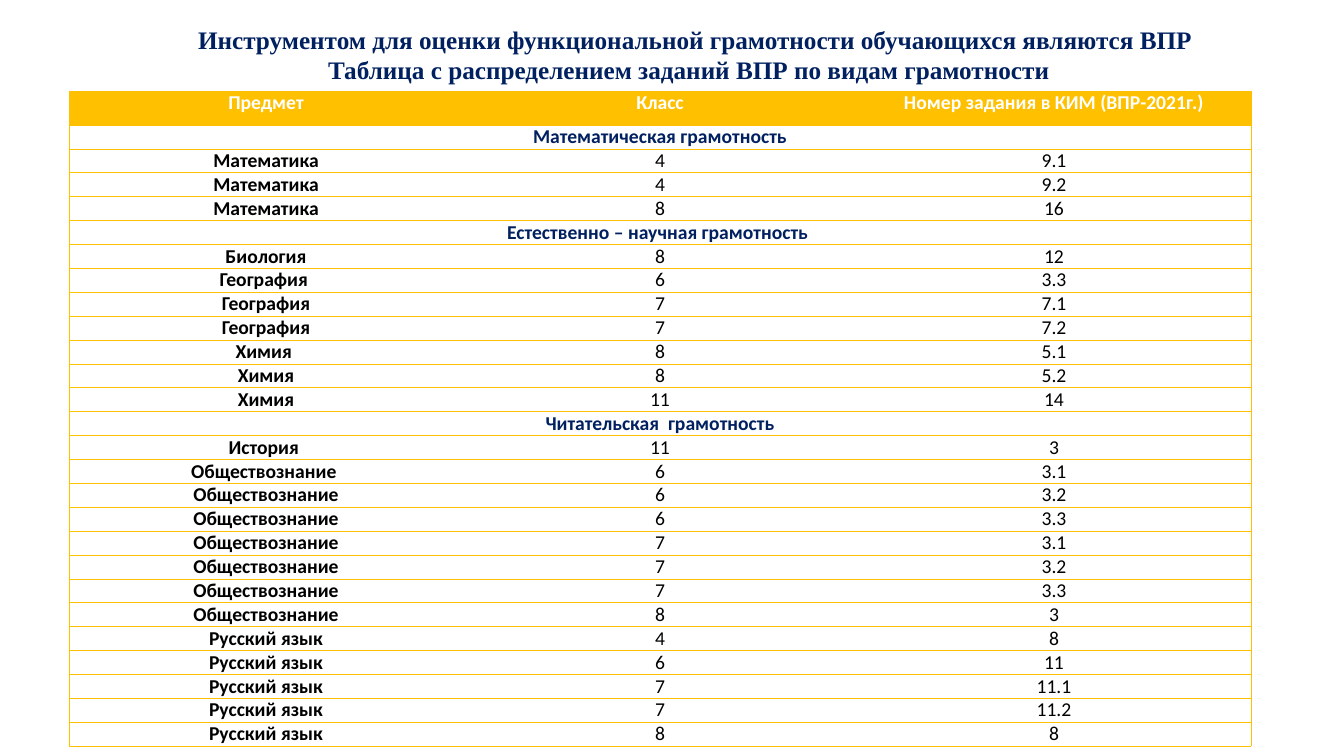
from lxml.etree import SubElement
from pptx import Presentation
from pptx.dml.color import RGBColor
from pptx.enum.text import MSO_AUTO_SIZE, PP_ALIGN
from pptx.oxml.ns import qn
from pptx.util import Emu, Pt

TITLE = [
    " Инструментом для оценки функциональной грамотности обучающихся являются ВПР",
    "Таблица с распределением заданий ВПР по видам грамотности ",
]
HEADINGS = ("Предмет", "Класс", "Номер задания в КИМ (ВПР-2021г.)")
LITERACIES = {
    "Математическая грамотность": [
        ("Математика", "4", "9.1"),
        ("Математика", "4", "9.2"),
        ("Математика", "8", "16"),
    ],
    "Естественно – научная грамотность ": [
        ("Биология", "8", "12"),
        ("География ", "6", "3.3"),
        ("География", "7", "7.1"),
        ("География", "7", "7.2"),
        ("Химия ", "8", "5.1"),
        ("Химия", "8", "5.2"),
        ("Химия", "11", "14"),
    ],
    "Читательская  грамотность": [
        ("История ", "11", "3"),
        ("Обществознание ", "6", "3.1"),
        ("Обществознание", "6", "3.2"),
        ("Обществознание", "6", "3.3"),
        ("Обществознание", "7", "3.1"),
        ("Обществознание", "7", "3.2"),
        ("Обществознание", "7", "3.3"),
        ("Обществознание", "8", "3"),
        ("Русский язык", "4", "8"),
        ("Русский язык", "6", "11"),
        ("Русский язык", "7", "11.1"),
        ("Русский язык", "7", "11.2"),
        ("Русский язык", "8", "8"),
    ],
}
GOLD, NAVY, WHITE, BLACK = "FFC000", "002060", "FFFFFF", "000000"

SLIDE_W, SLIDE_H = 1344, 756
LEFT, TITLE_TOP, TITLE_W, TITLE_H = 69, 19, 1246, 72
TABLE_TOP, COLUMN_W, HEADING_H, ROW_H = 91, 394, 34, 17
CELL_INSET = 4


def px(length):
    return Emu(round(length * 914400 / 100.8))


def color(code):
    return RGBColor.from_string(code)


def write(frame, lines, font="Calibri", size=14, fill=BLACK, bold=False):
    """Put centred lines into a text frame, one paragraph each."""
    for index, line in enumerate(lines):
        paragraph = frame.add_paragraph() if index else frame.paragraphs[0]
        paragraph.alignment = PP_ALIGN.CENTER
        run = paragraph.add_run()
        run.text = line
        run.font.name = font
        run.font.size = Pt(size)
        run.font.bold = bold
        run.font.color.rgb = color(fill)


def set_borders(cell, sides):
    """Draw gold lines on the named sides (letters of LRTB), none elsewhere."""
    properties = cell._tc.get_or_add_tcPr()
    for side in "LRTB":
        line = SubElement(properties, qn(f"a:ln{side}"), w=str(Pt(0.5)))
        if side in sides:
            solid = SubElement(line, qn("a:solidFill"))
            SubElement(solid, qn("a:srgbClr"), val=GOLD)
        else:
            SubElement(line, qn("a:noFill"))


def fill_cell(cell, text, sides, background=WHITE, **text_format):
    cell.margin_left = cell.margin_right = px(CELL_INSET)
    cell.margin_top = cell.margin_bottom = 0
    set_borders(cell, sides)
    cell.fill.solid()
    cell.fill.fore_color.rgb = color(background)
    write(cell.text_frame, [text], **text_format)


def add_literacy_table(slide):
    rows = [HEADINGS]
    for literacy, tasks in LITERACIES.items():
        rows += [(literacy,), *tasks]
    columns = len(HEADINGS)
    height = HEADING_H + ROW_H * (len(rows) - 1)
    table = slide.shapes.add_table(
        len(rows), columns, px(LEFT), px(TABLE_TOP), px(COLUMN_W * columns), px(height)
    ).table
    table.first_row = table.horz_banding = False
    for column in table.columns:
        column.width = px(COLUMN_W)

    for r, row in enumerate(rows):
        table.rows[r].height = px(ROW_H if r else HEADING_H)
        if len(row) == 1:
            table.cell(r, 0).merge(table.cell(r, columns - 1))
            fill_cell(table.cell(r, 0), row[0], "LRTB", fill=NAVY, bold=True)
            continue
        for c, text in enumerate(row):
            sides = "TB" + "L" * (c == 0) + "R" * (c == columns - 1)
            if r == 0:
                look = {"background": GOLD, "fill": WHITE, "bold": True}
            else:
                look = {"bold": c == 0}
            fill_cell(table.cell(r, c), text, sides, **look)


def add_title(slide):
    box = slide.shapes.add_textbox(px(LEFT), px(TITLE_TOP), px(TITLE_W), px(TITLE_H))
    box.text_frame.word_wrap = True
    box.text_frame.auto_size = MSO_AUTO_SIZE.SHAPE_TO_FIT_TEXT
    write(box.text_frame, TITLE, font="Times New Roman", size=18, fill=NAVY, bold=True)


def main():
    deck = Presentation()
    deck.slide_width, deck.slide_height = px(SLIDE_W), px(SLIDE_H)
    slide = deck.slides.add_slide(deck.slide_layouts[6])
    add_literacy_table(slide)
    add_title(slide)
    deck.save("out.pptx")


if __name__ == "__main__":
    main()
